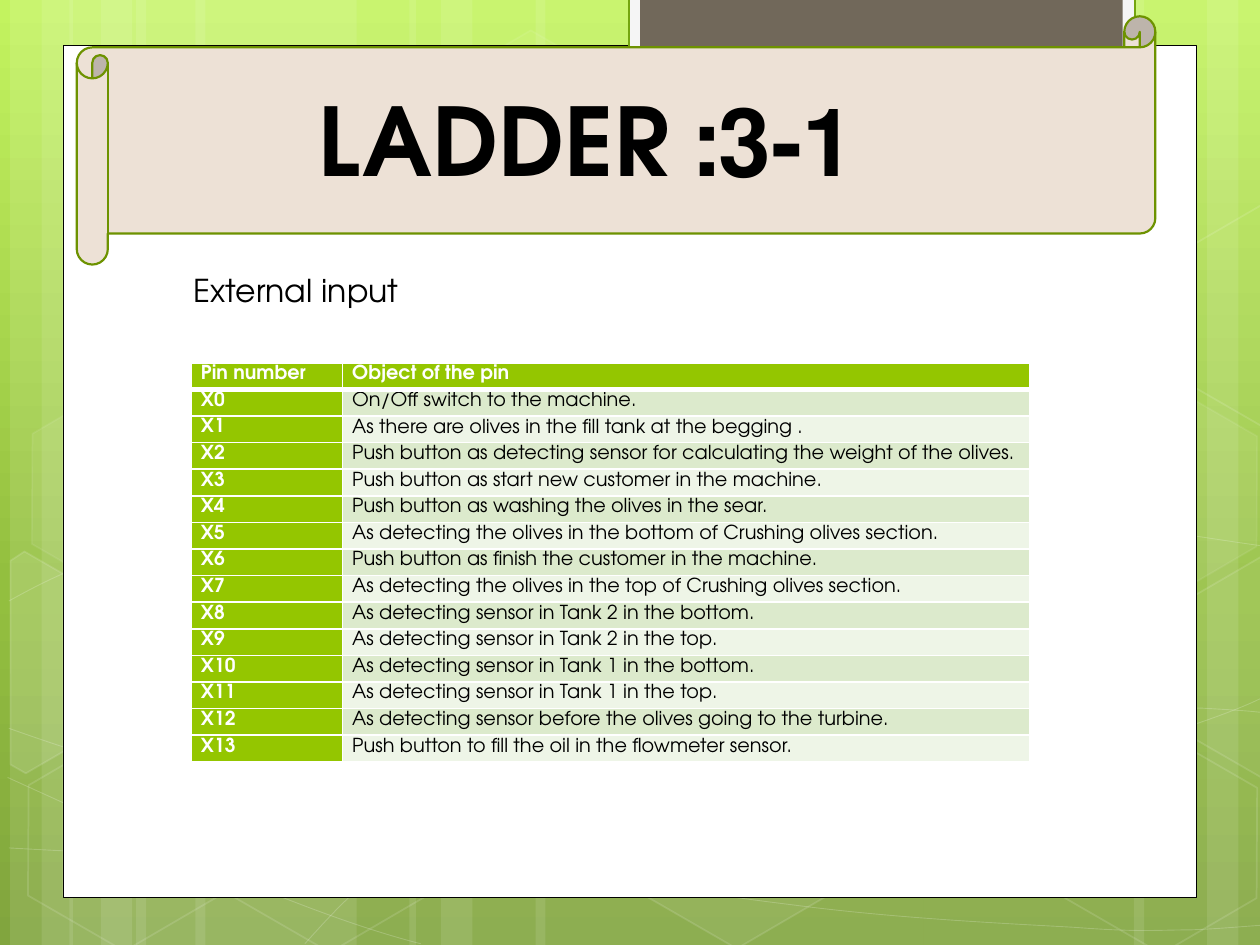
from lxml import etree
from pptx import Presentation, util as u
from pptx.dml.color import RGBColor
from pptx.enum import shapes, text
from pptx.oxml import ns

# The slide is a grid of 10 columns by 7.5 rows
SLIDE_WIDTH, SLIDE_HEIGHT = u.Inches(10), u.Inches(7.5)
COLUMNS, ROWS = 10, 7.5

FONT = "TeX Gyre Adventor"
WHITE, BLACK = RGBColor(255, 255, 255), RGBColor(0, 0, 0)
TAB_LIGHT, TAB_BORDER = RGBColor(0xF5, 0xF5, 0xF5), RGBColor(0x74, 0xA5, 0x10)
TAB_BROWN = RGBColor(0x71, 0x68, 0x5A)
SCROLL, SCROLL_BORDER = RGBColor(0xED, 0xE1, 0xD6), RGBColor(0x6D, 0x92, 0)
GREEN = RGBColor(0x94, 0xC6, 0)
BANDS = RGBColor(0xDC, 0xEA, 0xCC), RGBColor(0xEE, 0xF5, 0xE7)
GRADIENT = [(0, RGBColor(0xC3, 0xF3, 0x5F)), (62, RGBColor(0x93, 0xBF, 0x3F)),
            (100, RGBColor(0x81, 0xA5, 0x3E))]

# Stripes: left, width
STRIPES = [(1.08, 1.75), (0.08, 0.5), (0.33, 0.83), (1.55, 1.75), (0.55, 0.5),
           (0.8, 0.83), (7.33, 1.75), (9.58, 0.5), (9, 0.83), (4.25, 3.08),
           (3.25, 0.5), (3.5, 0.83)]
# Curves: a start point, then segments of three points (Bézier) or one (straight)
CURVES = [
    [[(0.07, 6.73)], [(0.61, 6.76), (1.15, 6.79), (1.9, 6.78)],
     [(2.65, 6.77), (3.58, 6.75), (4.58, 6.65)],
     [(5.58, 6.55), (7, 6.36), (7.92, 6.17)],
     [(8.83, 5.98), (9.77, 5.68), (10.07, 5.51)]],
    [[(0.07, 4.77)], [(0.36, 4.61), (0.65, 4.46), (1.21, 4.31)],
     [(1.78, 4.16), (2.59, 3.94), (3.47, 3.87)],
     [(4.36, 3.8), (5.44, 3.79), (6.54, 3.87)],
     [(7.64, 3.95), (9.47, 4.26), (10.07, 4.34)]],
    [[(0.06, 6.17)], [(1.27, 6.72), (2.47, 7.27), (3.34, 7.49)]],
    [[(0.07, 5.78)], [(0.38, 5.89), (0.7, 6), (1.28, 6.16)],
     [(1.86, 6.31), (2.73, 6.56), (3.57, 6.73)],
     [(4.4, 6.9), (5.45, 7.08), (6.28, 7.18)],
     [(7.11, 7.29), (8, 7.33), (8.53, 7.36)],
     [(9.05, 7.4), (9.19, 7.38), (9.45, 7.38)],
     [(9.71, 7.37), (9.89, 7.35), (10.07, 7.34)]],
    [[(2.42, 7.49)], [(2.6, 7.29), (2.78, 7.09), (3.02, 6.91)],
     [(3.26, 6.73), (3.6, 6.53), (3.88, 6.39)],
     [(4.16, 6.25), (4.33, 6.19), (4.7, 6.09)],
     [(5.06, 5.99), (5.73, 5.85), (6.08, 5.78)],
     [(6.44, 5.71), (6.49, 5.71), (6.8, 5.69)],
     [(7.11, 5.66), (7.6, 5.63), (7.94, 5.62)],
     [(8.29, 5.61), (8.86, 5.62), (8.86, 5.62)], [(9.53, 5.62)],
     [(9.71, 5.63), (9.88, 5.64), (9.97, 5.65)],
     [(10.06, 5.66), (10.03, 5.65), (10.06, 5.66)]],
]
# Hexagons: left, top, fill opacity, line opacity
HEXAGONS = [(3.34, 0.36, 4, 8), (4.97, 5.89, 6, 12), (0.11, 5.91, None, 12),
            (0.14, 3.12, 7, 8), (1.74, 5.92, None, 12), (7.53, 4.53, 10, 12),
            (8.34, 5.93, None, 12), (8.34, 3.14, 7, 8)]
# Hexagons cut by the slide's edge: left, top, corners before turning, fill opacity
CUT_LEFT = [(0, 0.12), (0.06, 0), (0.95, 0), (1.38, 0.77), (0.95, 1.52), (0.81, 1.52)]
CUT_RIGHT = [(0, 0.75), (0.43, 0), (0.52, 0), (1.36, 1.45), (1.31, 1.52), (0.43, 1.52)]
CUT_HEXAGONS = [(-0.33, 4.59, CUT_LEFT, 10), (9.17, 4.44, CUT_RIGHT, 4),
                (9.17, 1.65, CUT_RIGHT, None)]
HEADER = ("Pin number", "Object of the pin")
PINS = [
    "On/Off switch to the machine.",
    "As there are olives in the fill tank at the begging .",
    "Push button as detecting sensor for calculating the weight of the olives.",
    "Push button as start new customer in the machine.",
    "Push button as washing the olives in the sear.",
    "As detecting the olives in the bottom of Crushing olives section.",
    "Push button as finish the customer in the machine.",
    "As detecting the olives in the top of Crushing olives section.",
    "As detecting sensor in Tank 2 in the bottom.",
    "As detecting sensor in Tank 2 in the top.",
    "As detecting sensor in Tank 1 in the bottom.",
    "As detecting sensor in Tank 1 in the top.",
    "As detecting sensor before the olives going to the turbine.",
    "Push button to fill the oil in the flowmeter sensor.",
]


def across(columns):
    return u.Emu(round(SLIDE_WIDTH * columns / COLUMNS))


def down(rows):
    return u.Emu(round(SLIDE_HEIGHT * rows / ROWS))


def box(left, top, width, height):
    return across(left), down(top), across(width), down(height)


def style(shape, fill=None, line=None, width=1, fill_opacity=100, line_opacity=100):
    shape.shadow.inherit = False
    for target, color, opacity in ((shape.fill, fill, fill_opacity),
                                   (shape.line.fill, line, line_opacity)):
        if color is None:
            target.background()
            continue
        target.solid()
        target.fore_color.rgb = color
        if opacity < 100:
            element = target._xPr.find(".//" + ns.qn("a:srgbClr"))
            etree.SubElement(element, ns.qn("a:alpha"), val=str(opacity * 1000))
    if line is not None:
        shape.line.width = u.Pt(width)


def style_faint(shape, fill_opacity, line_opacity, width=1):
    style(shape, WHITE if fill_opacity else None, WHITE, width,
          fill_opacity or 100, line_opacity)


def add_shape(slide, kind, area):
    return slide.shapes.add_shape(kind, *box(*area))


def add_outline(slide, points, close):
    points = [(across(x), down(y)) for x, y in points]
    builder = slide.shapes.build_freeform(*points[0])
    builder.add_line_segments(points[1:], close=close)
    return builder.convert_to_shape()


def add_curve(slide, segments):
    """Lay out every point, then join each group of three into a Bézier segment."""
    shape = add_outline(slide, [point for segment in segments for point in segment], False)
    steps = iter(list(shape._element.iter(ns.qn("a:lnTo"))))
    for segment in segments[1:]:
        group = [next(steps) for _ in segment]
        if len(group) == 3:
            bezier = etree.Element(ns.qn("a:cubicBezTo"))
            group[0].addprevious(bezier)
            for step in group:
                bezier.append(step[0])
                step.getparent().remove(step)
    return shape


def set_background(slide):
    fill = slide.background.fill
    fill.gradient()
    gradient = fill._xPr.find(ns.qn("a:gradFill"))
    for child in list(gradient):
        gradient.remove(child)
    stops = etree.SubElement(gradient, ns.qn("a:gsLst"))
    for position, color in GRADIENT:
        stop = etree.SubElement(stops, ns.qn("a:gs"), pos=str(position * 1000))
        etree.SubElement(stop, ns.qn("a:srgbClr"), val=str(color))
    etree.SubElement(gradient, ns.qn("a:lin"), ang="5400000", scaled="0")


def set_text(paragraph, words, size, color=BLACK, bold=False):
    paragraph.text = words
    font = paragraph.font
    font.name, font.size, font.bold = FONT, u.Pt(size), bold
    font.color.rgb = color


def add_text(slide, area, words, size, bold=False, rtl=False):
    frame = slide.shapes.add_textbox(*box(*area)).text_frame
    frame.word_wrap = False
    frame.auto_size = text.MSO_AUTO_SIZE.SHAPE_TO_FIT_TEXT
    set_text(frame.paragraphs[0], words, size, bold=bold)
    if rtl:
        frame.paragraphs[0].alignment = text.PP_ALIGN.CENTER
        frame.paragraphs[0]._p.get_or_add_pPr().set("rtl", "1")


def fill_cell(cell, words, fill, color, bold, bottom):
    properties = cell._tc.get_or_add_tcPr()
    for side, width in (("L", 1), ("R", 1), ("T", 1), ("B", bottom)):
        line = etree.SubElement(properties, ns.qn("a:ln" + side), w=str(u.Pt(width)))
        solid = etree.SubElement(line, ns.qn("a:solidFill"))
        etree.SubElement(solid, ns.qn("a:srgbClr"), val=str(WHITE))
    cell.fill.solid()
    cell.fill.fore_color.rgb = fill
    cell.margin_left = cell.margin_right = u.Pt(5.4)
    cell.margin_top = cell.margin_bottom = 0
    cell.text_frame.paragraphs[0].line_spacing = 1.15
    set_text(cell.text_frame.paragraphs[0], words, 11, color, bold)


def add_pin_table(slide):
    rows = [HEADER] + [(f"X{number}", use) for number, use in enumerate(PINS)]
    table = slide.shapes.add_table(len(rows), 2, *box(1.52, 2.88, 6.65, 3.16)).table
    for column, width in zip(table.columns, (1.2, 5.45)):
        column.width = across(width)
    for r, row in enumerate(rows):
        for c, words in enumerate(row):
            strong = r == 0 or c == 0
            fill_cell(table.cell(r, c), words, GREEN if strong else BANDS[(r - 1) % 2],
                      WHITE if strong else BLACK, strong, 3 if r == 0 else 1)


def add_backdrop(slide):
    set_background(slide)
    for left, width in STRIPES:
        stripe = add_shape(slide, shapes.MSO_SHAPE.RECTANGLE, (left, 0, width, ROWS))
        style(stripe, WHITE, fill_opacity=10)
    for segments in CURVES:
        style_faint(add_curve(slide, segments), None, 20, 0.5)
    for left, top, fill_opacity, line_opacity in HEXAGONS:
        hexagon = add_shape(slide, shapes.MSO_SHAPE.HEXAGON, (left, top, 1.75, 1.52))
        hexagon.adjustments[0], hexagon.adjustments[1] = 0.285, 1.155
        hexagon.rotation = 30
        style_faint(hexagon, fill_opacity, line_opacity)
    for left, top, corners, fill_opacity in CUT_HEXAGONS:
        hexagon = add_outline(slide, [(left + x, top + y) for x, y in corners], True)
        hexagon.rotation = 30
        style_faint(hexagon, fill_opacity, 12)


def main():
    presentation = Presentation()
    presentation.slide_width, presentation.slide_height = SLIDE_WIDTH, SLIDE_HEIGHT
    slide = presentation.slides.add_slide(presentation.slide_layouts[6])
    add_backdrop(slide)

    # White page, top tab and title scroll
    rectangle = shapes.MSO_SHAPE.RECTANGLE
    style(add_shape(slide, rectangle, (0.5, 0.36, 9, 6.76)), WHITE, BLACK, 0.5)
    style(add_shape(slide, rectangle, (4.99, -0.02, 4.02, 0.76)), TAB_LIGHT, TAB_BORDER, 1.25)
    style(add_shape(slide, rectangle, (5.08, -0.02, 3.83, 0.68)), TAB_BROWN)
    scroll = add_shape(slide, shapes.MSO_SHAPE.HORIZONTAL_SCROLL, (0.61, 0.13, 8.56, 1.97))
    style(scroll, SCROLL, SCROLL_BORDER, 1.25)

    # Title, table and its heading
    add_text(slide, (2.37, 0.6, 4.58, 1.01), "3-1: LADDER", 54, bold=True, rtl=True)
    add_pin_table(slide)
    add_text(slide, (1.44, 2.1, 1.85, 0.4), "External input", 18)
    presentation.save("out.pptx")


if __name__ == "__main__":
    main()
